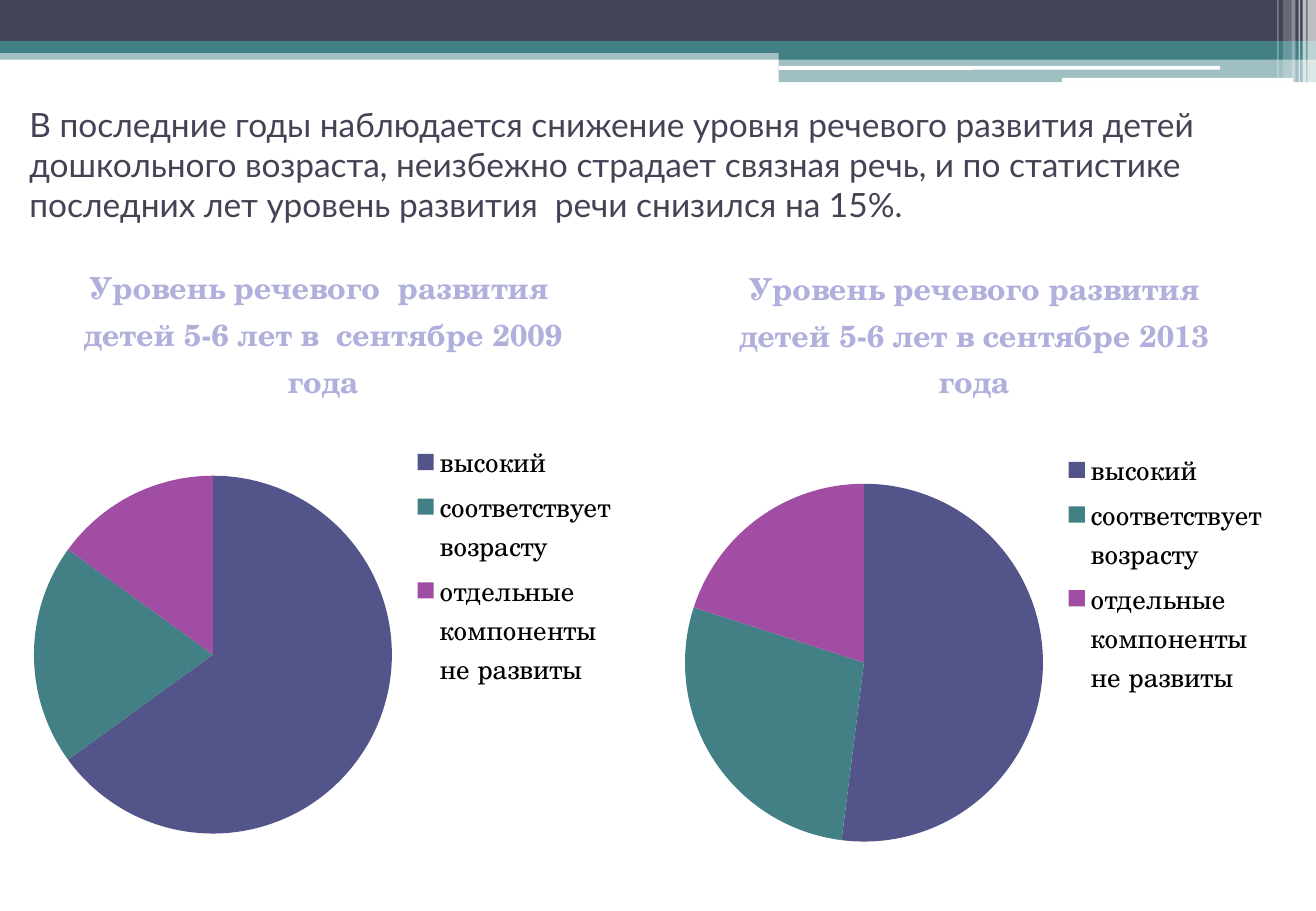
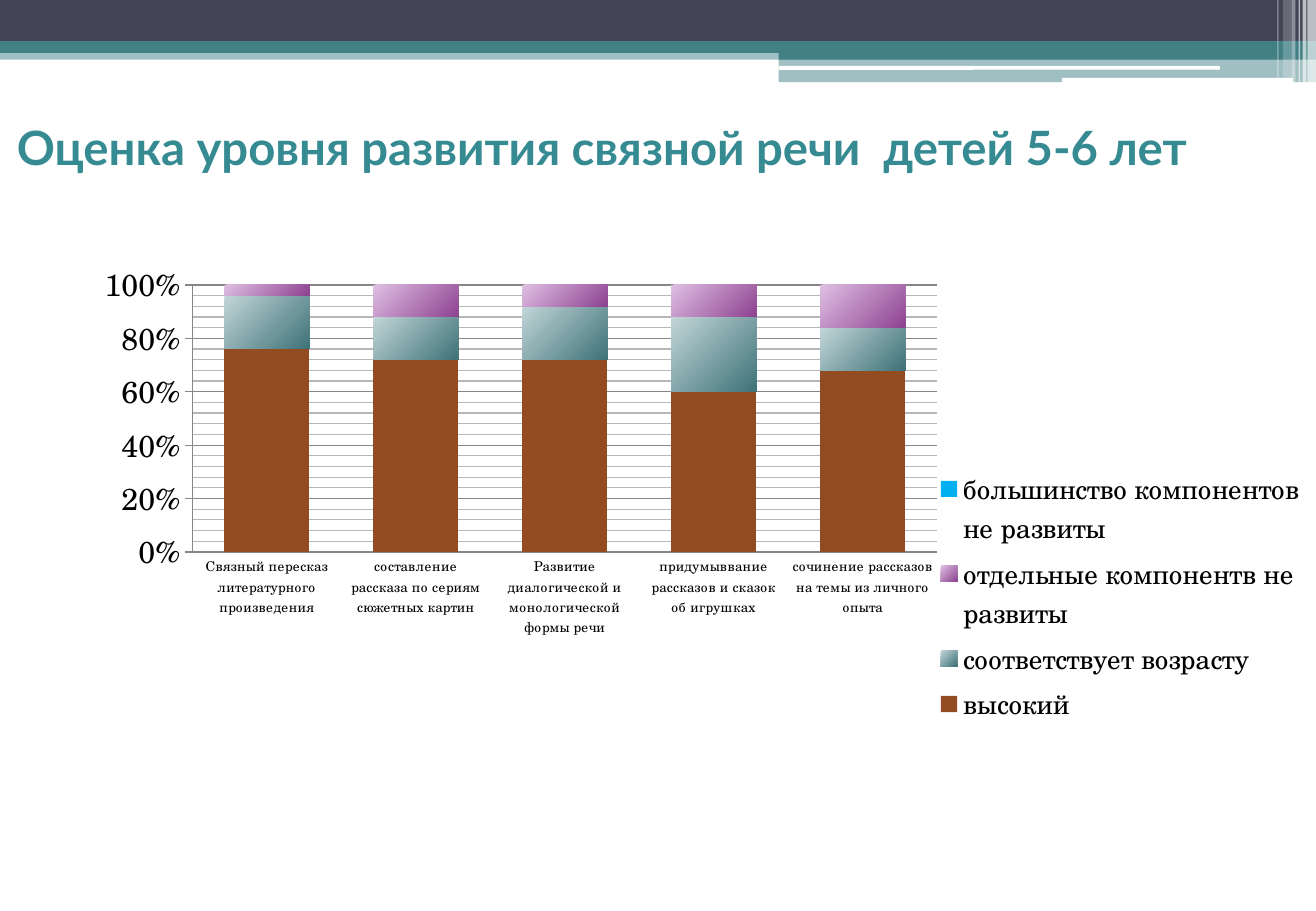
from dataclasses import dataclass

from pptx import Presentation
from pptx.chart.chart import Chart
from pptx.chart.data import CategoryChartData
from pptx.dml.color import RGBColor
from pptx.enum import chart as charts, shapes, text
from pptx.oxml import parse_xml
from pptx.oxml.ns import nsdecls, qn
from pptx.oxml.xmlchemy import BaseOxmlElement
from pptx.slide import Slide, SlideLayout
from pptx.util import Cm, Pt

SLATE = RGBColor(0x42, 0x44, 0x56)
TEAL = RGBColor(0x43, 0x80, 0x86)
BRIGHT_TEAL = RGBColor(0x36, 0x8B, 0x93)
WHITE = RGBColor(0xFF, 0xFF, 0xFF)
BLACK = RGBColor(0, 0, 0)
INDIGO = RGBColor(0x53, 0x54, 0x8A)
PURPLE = RGBColor(0xA0, 0x4D, 0xA3)
LAVENDER = RGBColor(0xB0, 0xB0, 0xDC)
BROWN = RGBColor(0x93, 0x4C, 0x22)
SKY = RGBColor(0x00, 0xB0, 0xF0)
PALE_TEAL = RGBColor(0xC2, 0xD6, 0xD9)
DEEP_TEAL = RGBColor(0x3F, 0x73, 0x78)
PALE_PURPLE = RGBColor(0xDF, 0xBF, 0xE3)
DEEP_PURPLE = RGBColor(0x8E, 0x43, 0x91)
AXIS_GREY = RGBColor(0x86, 0x86, 0x86)
GRID_GREY = RGBColor(0xB7, 0xB7, 0xB7)

TITLE_FONT = "Lato"
CHART_FONT = "TeX Gyre Schola"
SLIDE_WIDTH, SLIDE_HEIGHT = 27.51, 19.05
STEP_LEFT = 16.28
STEP_WIDTH = SLIDE_WIDTH - STEP_LEFT
RULE_WIDTH = Pt(0.75)


@dataclass(frozen=True)
class Box:
    left: float
    top: float
    width: float
    height: float

    def lengths(self) -> tuple[Cm, Cm, Cm, Cm]:
        return Cm(self.left), Cm(self.top), Cm(self.width), Cm(self.height)


@dataclass(frozen=True)
class Band:
    box: Box
    color: RGBColor
    opacity: int = 100
    rounded: bool = False


@dataclass(frozen=True)
class Heading:
    box: Box
    wording: str
    size: float
    color: RGBColor
    bold: bool = False


@dataclass(frozen=True)
class Survey:
    box: Box
    title: str
    shares: tuple[int, ...]


@dataclass(frozen=True)
class Level:
    name: str
    shares: tuple[int | None, ...]
    colors: tuple[RGBColor, ...]


BANDS = (
    Band(Box(0, 1.02, SLIDE_WIDTH, 0.23), TEAL, 50),
    Band(Box(0, 0, SLIDE_WIDTH, 0.86), SLATE),
    Band(Box(0, 0.86, SLIDE_WIDTH, 0.25), TEAL),
    Band(Box(STEP_LEFT, 1, STEP_WIDTH, 0.25), TEAL),
    Band(Box(STEP_LEFT, 1.24, STEP_WIDTH, 0.48), TEAL, 50),
    Band(Box(STEP_LEFT, 1.38, 9.22, 0.08), WHITE, rounded=True),
    Band(Box(22.2, 1.63, 4.83, 0.1), WHITE, rounded=True),
    Band(Box(27.33, 0, 0.18, 1.73), WHITE, 65),
    Band(Box(27.23, 0, 0.08, 1.73), WHITE, 65),
    Band(Box(27.15, 0, 0.03, 1.73), WHITE, 60),
    Band(Box(27, 0, 0.08, 1.73), WHITE, 40),
    Band(Box(26.82, 0, 0.18, 1.63), WHITE, 20),
    Band(Box(26.7, 0, 0.03, 1.63), WHITE, 30),
)

DECLINE = Heading(
    Box(0.36, 1.81, 27.15, 3.24),
    "В последние годы наблюдается снижение уровня речевого развития детей "
    "дошкольного возраста, неизбежно страдает связная речь, и по статистике "
    "последних лет уровень развития  речи снизился на 15%.",
    19.8, SLATE,
)
ASSESSMENT = Heading(
    Box(0.1, 2.37, 27.4, 1.4),
    "Оценка уровня развития связной речи  детей 5-6 лет",
    28, BRIGHT_TEAL, bold=True,
)

PIE_LEVELS = ("высокий", "соответствует возрасту", "отдельные компоненты не развиты")
PIE_COLORS = (INDIGO, TEAL, PURPLE)
SURVEYS = (
    Survey(Box(0.36, 4.93, 12.8, 13.79),
           "Уровень речевого  развития  детей 5-6 лет в  сентябре 2009 года", (65, 20, 15)),
    Survey(Box(13.97, 4.93, 12.8, 14.12),
           "Уровень речевого развития детей 5-6 лет в сентябре 2013 года", (52, 28, 20)),
)

SKILLS = (
    "Связный пересказ литературного произведения",
    "составление рассказа по сериям сюжетных картин",
    "Развитие диалогической и монологической формы речи",
    "придумыввание рассказов и сказок об игрушках",
    "сочинение рассказов на темы из личного опыта",
)
LEVELS = (
    Level("высокий", (76, 72, 72, 60, 68), (BROWN,)),
    Level("соответствует возрасту", (20, 16, 20, 28, 16), (PALE_TEAL, DEEP_TEAL)),
    Level("отдельные компонентв не развиты", (4, 12, 8, 12, 16), (PALE_PURPLE, DEEP_PURPLE)),
    Level("большинство компонентов не развиты", (None,) * len(SKILLS), (SKY,)),
)
SKILLS_BOX = Box(1.12, 1.73, 26.39, 16.92)
SKILLS_PLOT = Box(0.11, 0.25, 0.59, 0.33)
SKILLS_LEGEND = Box(0.69, 0.47, 0.31, 0.33)


def add_bands(slide: Slide, layout: SlideLayout) -> None:
    for position, band in enumerate(BANDS, start=2):
        preset = shapes.MSO_SHAPE.ROUNDED_RECTANGLE if band.rounded else shapes.MSO_SHAPE.RECTANGLE
        strip = slide.shapes.add_shape(preset, *band.box.lengths())
        strip.shadow.inherit = False
        strip.line.fill.background()
        strip.fill.solid()
        strip.fill.fore_color.rgb = band.color
        if band.opacity < 100:
            tint = strip.element.spPr.find(".//" + qn("a:srgbClr"))
            tint.append(parse_xml(f'<a:alpha {nsdecls("a")} val="{band.opacity * 1000}"/>'))
        layout.shapes.element.insert(position, strip.element)


def set_heading(slide: Slide, heading: Heading) -> None:
    title = slide.shapes.title
    title.left, title.top, title.width, title.height = heading.box.lengths()
    frame = title.text_frame
    frame.word_wrap = True
    frame.auto_size = text.MSO_AUTO_SIZE.NONE
    frame.vertical_anchor = text.MSO_ANCHOR.MIDDLE
    paragraph = frame.paragraphs[0]
    paragraph.alignment = text.PP_ALIGN.LEFT
    run = paragraph.add_run()
    run.text = heading.wording
    run.font.name = TITLE_FONT
    run.font.size = Pt(heading.size)
    run.font.bold = heading.bold
    run.font.color.rgb = heading.color


def add_chart(slide: Slide, kind: charts.XL_CHART_TYPE, box: Box, data: CategoryChartData) -> Chart:
    chart = slide.shapes.add_chart(kind, *box.lengths(), data).chart
    chart.font.name = CHART_FONT
    chart.font.size = Pt(18)
    chart.font.color.rgb = BLACK
    chart.has_legend = True
    chart.legend.position = charts.XL_LEGEND_POSITION.RIGHT
    chart.legend.include_in_layout = False
    chart.legend.font.name = CHART_FONT
    chart.legend.font.size = Pt(16)
    chart.legend.font.color.rgb = BLACK
    return chart


def place_part(part: BaseOxmlElement, box: Box, position: int, target: str = "") -> None:
    for automatic in part.findall(qn("c:layout")):
        part.remove(automatic)
    part.insert(position, parse_xml(
        f'<c:layout {nsdecls("c")}><c:manualLayout>{target}'
        '<c:xMode val="edge"/><c:yMode val="edge"/>'
        f'<c:x val="{box.left}"/><c:y val="{box.top}"/>'
        f'<c:w val="{box.width}"/><c:h val="{box.height}"/>'
        '</c:manualLayout></c:layout>'
    ))


def add_survey_pie(slide: Slide, survey: Survey) -> None:
    data = CategoryChartData()
    data.categories = PIE_LEVELS
    data.add_series(survey.title, survey.shares)
    chart = add_chart(slide, charts.XL_CHART_TYPE.PIE, survey.box, data)
    chart.has_title = True
    caption = chart.chart_title.text_frame.paragraphs[0].add_run()
    caption.text = survey.title
    caption.font.name = CHART_FONT
    caption.font.size = Pt(18)
    caption.font.bold = True
    caption.font.color.rgb = LAVENDER
    plot = chart.plots[0]
    plot.vary_by_categories = True
    for index, color in enumerate(PIE_COLORS):
        sector = plot.series[0].points[index].format
        sector.fill.solid()
        sector.fill.fore_color.rgb = color
        sector.line.fill.background()


def add_skill_columns(slide: Slide) -> None:
    data = CategoryChartData()
    data.categories = SKILLS
    for level in LEVELS:
        data.add_series(level.name, level.shares)
    chart = add_chart(slide, charts.XL_CHART_TYPE.COLUMN_STACKED_100, SKILLS_BOX, data)
    chart.has_title = False
    plot = chart.plots[0]
    plot.gap_width = 75
    plot.overlap = 100
    plot.vary_by_categories = False
    for series, level in zip(plot.series, LEVELS):
        fill = series.format.fill
        if len(level.colors) == 1:
            fill.solid()
            fill.fore_color.rgb = level.colors[0]
        else:
            fill.gradient()
            fill.gradient_angle = 315
            for stop, color in zip(fill.gradient_stops, level.colors):
                stop.color.rgb = color

    skill_axis, share_axis = chart.category_axis, chart.value_axis
    skill_axis.major_tick_mark = charts.XL_TICK_MARK.NONE
    share_axis.major_tick_mark = charts.XL_TICK_MARK.OUTSIDE
    share_axis.has_major_gridlines = True
    share_axis.has_minor_gridlines = True
    share_axis.tick_labels.number_format = "0%"
    share_axis.tick_labels.number_format_is_linked = False
    for axis, size in ((skill_axis, 8), (share_axis, 18)):
        axis.tick_labels.font.name = CHART_FONT
        axis.tick_labels.font.size = Pt(size)
        axis.tick_labels.font.color.rgb = BLACK
    for ruled in (skill_axis, share_axis, share_axis.major_gridlines):
        ruled.format.line.color.rgb = AXIS_GREY
        ruled.format.line.width = RULE_WIDTH

    plot_area = chart.element.chart.plotArea
    plot_area.find(".//" + qn("c:minorGridlines")).append(parse_xml(
        f'<c:spPr {nsdecls("c", "a")}><a:ln w="{RULE_WIDTH}"><a:solidFill>'
        f'<a:srgbClr val="{GRID_GREY}"/></a:solidFill></a:ln></c:spPr>'
    ))
    place_part(plot_area, SKILLS_PLOT, 0, '<c:layoutTarget val="inner"/>')
    place_part(chart.element.find(".//" + qn("c:legend")), SKILLS_LEGEND, 1)


def main() -> None:
    deck = Presentation()
    deck.slide_width, deck.slide_height = Cm(SLIDE_WIDTH), Cm(SLIDE_HEIGHT)
    layout = deck.slide_layouts[5]

    decline = deck.slides.add_slide(layout)
    add_bands(decline, layout)
    set_heading(decline, DECLINE)
    for survey in SURVEYS:
        add_survey_pie(decline, survey)

    assessment = deck.slides.add_slide(layout)
    set_heading(assessment, ASSESSMENT)
    add_skill_columns(assessment)

    deck.save("out.pptx")


if __name__ == "__main__":
    main()
